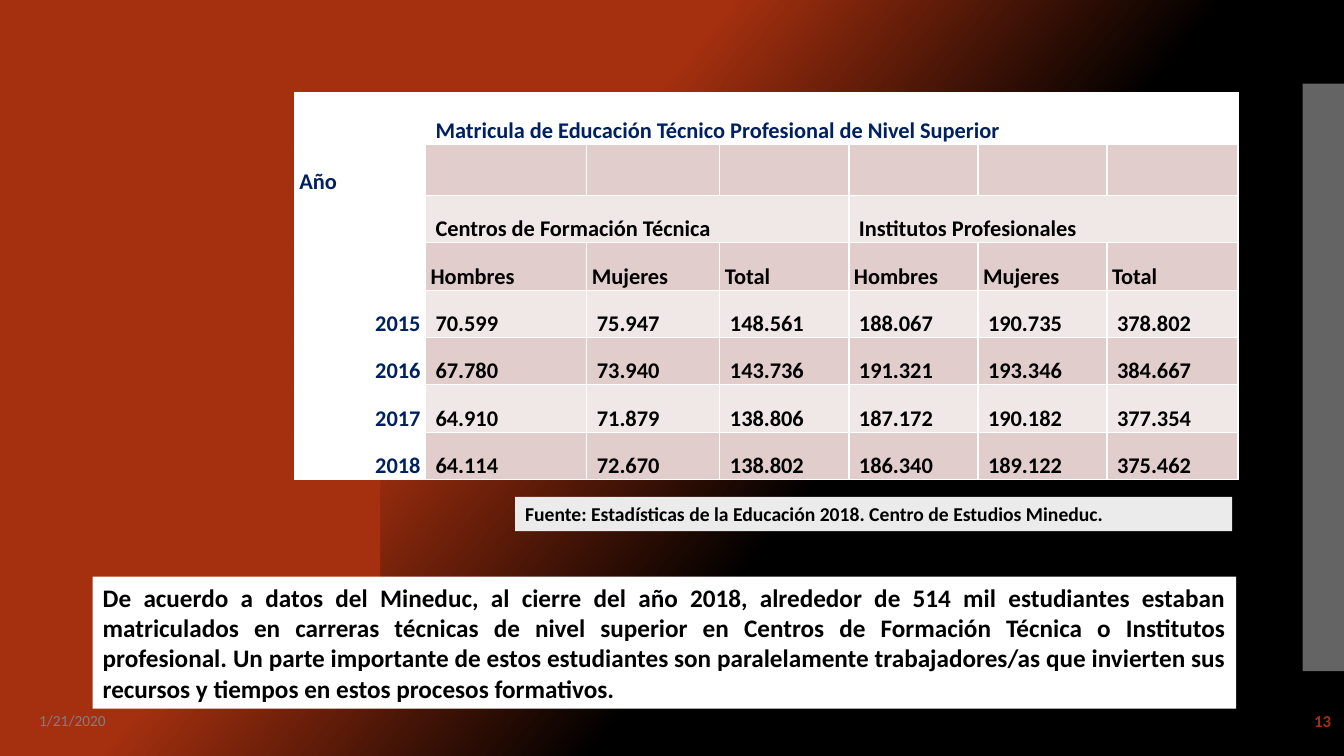
from pptx import Presentation
from pptx.dml.color import RGBColor
from pptx.enum import shapes, text
from pptx.oxml.ns import qn
from pptx.util import Inches, Pt
from lxml import etree

RUST = RGBColor(0xA5, 0x30, 0x0F)
BLACK = RGBColor(0, 0, 0)
WHITE = RGBColor(255, 255, 255)
NAVY = RGBColor(0, 0x20, 0x60)
GRAY = RGBColor(0x80, 0x80, 0x80)
SILVER = RGBColor(0xC8, 0xC8, 0xC8)
PALE = RGBColor(0xEB, 0xEB, 0xEB)
ROSE = RGBColor(0xE1, 0xCD, 0xCC)
BLUSH = RGBColor(0xF0, 0xE8, 0xE7)
ALIGN = text.PP_ALIGN
ANCHOR = text.MSO_ANCHOR


def write(frame, words, size=16, color=BLACK, bold=True, align=ALIGN.LEFT, space=1.0):
    frame.word_wrap = True
    para = frame.paragraphs[0]
    para.alignment = align
    para.line_spacing = space
    run = para.add_run()
    run.text = words
    run.font.name = "Calibri"
    run.font.size = Pt(size)
    run.font.bold = bold
    run.font.color.rgb = color


def block(x, y, w, h, color):
    box = slide.shapes.add_shape(shapes.MSO_SHAPE.RECTANGLE,
                                 Inches(x), Inches(y), Inches(w), Inches(h))
    box.shadow.inherit = False
    box.fill.solid()
    box.fill.fore_color.rgb = color
    box.line.fill.background()
    return box


deck = Presentation()
deck.slide_width = Inches(13.33)
deck.slide_height = Inches(7.5)
slide = deck.slides.add_slide(deck.slide_layouts[6])

back = slide.background.fill
back.gradient()
back.gradient_angle = 320
for stop, place, color in zip(back.gradient_stops, (0.37, 0.62), (RUST, BLACK)):
    stop.position = place
    stop.color.rgb = color

block(0, 0.83, 3.77, 5.83, RUST)
bar = block(12.92, 0.83, 0.41, 5.83, SILVER)
tint = bar.fill._xPr.find(".//" + qn("a:srgbClr"))
etree.SubElement(tint, qn("a:alpha")).set("val", "50000")

note = block(0.92, 5.72, 11.34, 1.31, WHITE)
write(note.text_frame,
      "De acuerdo a datos del Mineduc, al cierre del año 2018, alrededor de 514 mil "
      "estudiantes estaban matriculados en carreras técnicas de nivel superior en "
      "Centros de Formación Técnica o Institutos profesional. Un parte importante de "
      "estos estudiantes son paralelamente trabajadores/as que invierten sus recursos "
      "y tiempos en estos procesos formativos.",
      size=18, align=ALIGN.JUSTIFY)

wide = [1.3, 1.6, 1.32, 1.28, 1.28, 1.28, 1.3]
high = [0.51] * 2 + [0.47] * 6
heads = ["Hombres", "Mujeres", "Total"]
rows = [
    ["", " Matricula de Educación Técnico Profesional de Nivel Superior"],
    ["Año"],
    ["", " Centros de Formación Técnica", "", "", " Institutos Profesionales"],
    [""] + heads * 2,
    ["2015", " 70.599", " 75.947", " 148.561", " 188.067", " 190.735", " 378.802"],
    ["2016", " 67.780", " 73.940", " 143.736", " 191.321", " 193.346", " 384.667"],
    ["2017", " 64.910", " 71.879", " 138.806", " 187.172", " 190.182", " 377.354"],
    ["2018", " 64.114", " 72.670", " 138.802", " 186.340", " 189.122", " 375.462"],
]
grid = slide.shapes.add_table(len(high), len(wide), Inches(2.92), Inches(0.92),
                              Inches(sum(wide)), Inches(sum(high))).table
for col, w in zip(grid.columns, wide):
    col.width = Inches(w)
for row, h in zip(grid.rows, high):
    row.height = Inches(h)
for r, c, last in [(0, 1, 5), (2, 1, 3), (2, 4, 6)]:
    grid.cell(r, c).merge(grid.cell(r, last))

for r, row in enumerate(rows):
    for c in range(len(wide)):
        cell = grid.cell(r, c)
        edge = r == 0 or c == 0
        cell.fill.solid()
        cell.fill.fore_color.rgb = WHITE if edge else ROSE if r % 2 else BLUSH
        cell.vertical_anchor = ANCHOR.BOTTOM
        cell.margin_left = cell.margin_right = Inches(0.05)
        cell.margin_top = cell.margin_bottom = 0
        if c < len(row) and row[c]:
            write(cell.text_frame, row[c], color=NAVY if edge else BLACK, space=1.15,
                  align=ALIGN.RIGHT if c == 0 and r > 3 else ALIGN.LEFT)

credit = block(5.11, 4.93, 7.11, 0.34, PALE)
write(credit.text_frame,
      "Fuente: Estadísticas de la Educación 2018. Centro de Estudios Mineduc.", size=14)

for x, w, words, look in [
    (0.29, 3, "1/21/2020", dict(size=11, color=GRAY, bold=False)),
    (11.63, 1.67, "13", dict(size=12, color=RUST, align=ALIGN.RIGHT)),
]:
    foot = slide.shapes.add_textbox(Inches(x), Inches(6.95), Inches(w), Inches(0.4))
    foot.text_frame.vertical_anchor = ANCHOR.MIDDLE
    write(foot.text_frame, words, **look)

deck.save("out.pptx")
